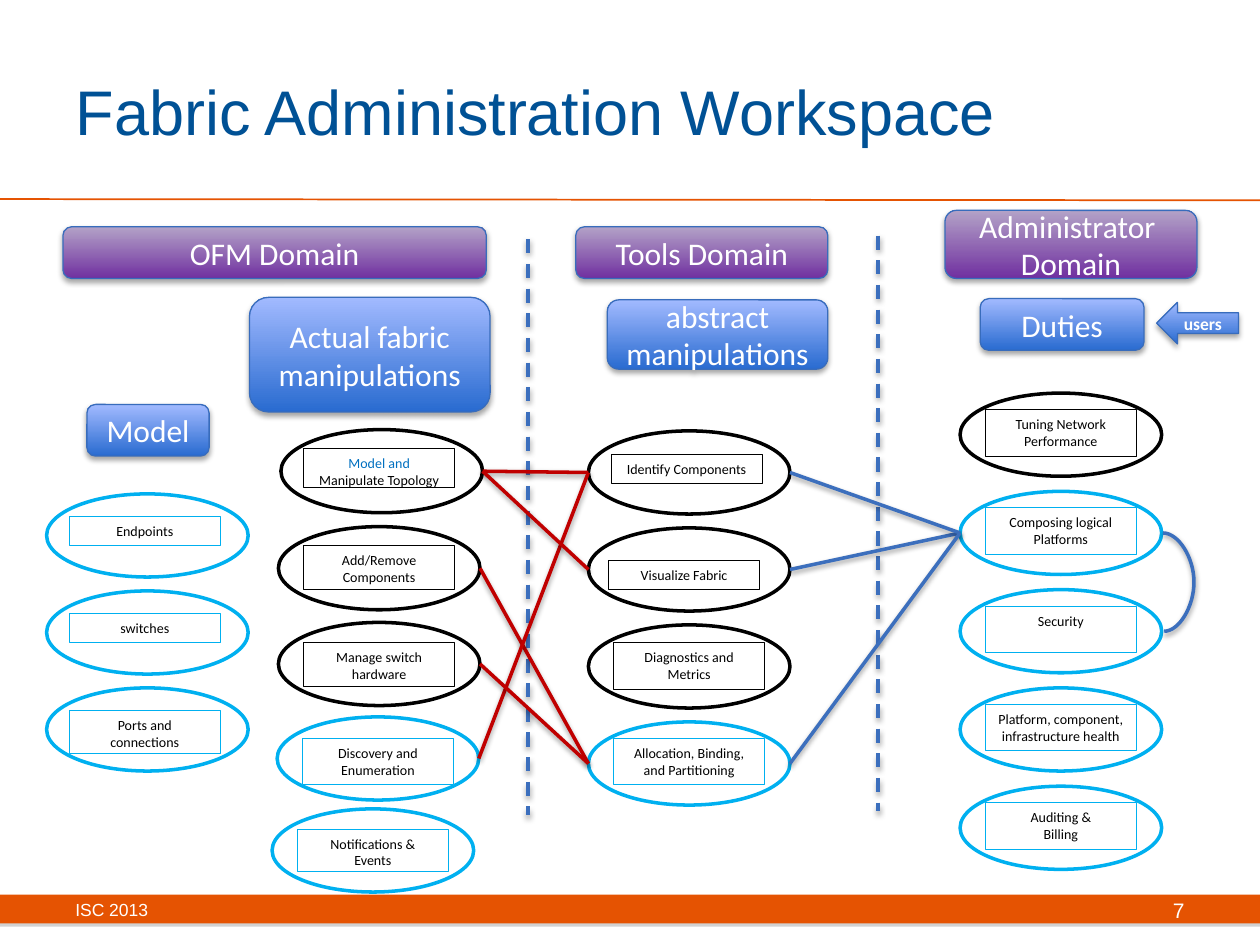
from dataclasses import dataclass

from lxml import etree
from pptx import Presentation
from pptx.dml.color import RGBColor
from pptx.enum.dml import MSO_LINE
from pptx.enum.shapes import MSO_CONNECTOR, MSO_SHAPE
from pptx.enum.text import MSO_ANCHOR, PP_ALIGN
from pptx.oxml.ns import qn
from pptx.util import Pt

OVAL, RECT, ROUND = MSO_SHAPE.OVAL, MSO_SHAPE.RECTANGLE, MSO_SHAPE.ROUNDED_RECTANGLE
ARROW = MSO_SHAPE.RIGHT_ARROW
LINE, CURVE = MSO_CONNECTOR.STRAIGHT, MSO_CONNECTOR.CURVE
DASH = MSO_LINE.DASH
TOP, MIDDLE = MSO_ANCHOR.TOP, MSO_ANCHOR.MIDDLE
LEFT, CENTER, RIGHT = PP_ALIGN.LEFT, PP_ALIGN.CENTER, PP_ALIGN.RIGHT
SCALE = 9144
OVAL_W, OVAL_H, LABEL_W = 160, 66, 120


@dataclass(frozen=True)
class Theme:
    """Hold the colours, type formats and shadows of the slide."""
    white: str = "FFFFFF"
    ink: str = "000000"
    cyan: str = "00B0F0"
    lead: str = "0070C0"
    orange: str = "E55302"
    edge: str = "386CBC"
    blue: str = "3C6FBD"
    red: str = "C00000"
    azure: tuple = ("296BD0", "A2BAFF")
    purple: tuple = ("7030A0", "B3A2C7")
    title: tuple = ("Arial", 36, False, "005195")
    foot: tuple = ("Arial", 10, False, "FFFFFF")
    page: tuple = ("Arial", 12, False, "FFFFFF")
    head: tuple = ("Calibri", 18, False, "FFFFFF")
    user: tuple = ("Calibri", 10, True, "FFFFFF")
    label: tuple = ("Calibri", 8, False, "000000")
    soft: tuple = ("000000", 35, 3.1, 1.8)
    cast: tuple = ("000000", 38, 3.1, 1.6)
    flat: tuple = ("808080", 35, 0, 1.8)


THEME = Theme()


def px(*sizes):
    """Turn px lengths into EMU."""
    return [size * SCALE for size in sizes]


def rgb(tone):
    """Make a colour from its hex code."""
    return RGBColor.from_string(tone)


def shade(item, form):
    """Give a shape or connector an outer shadow, or none."""
    props = item._element.spPr
    for old in props.findall(qn("a:effectLst")):
        props.remove(old)
    list_ = etree.SubElement(props, qn("a:effectLst"))
    if form:
        tone, alpha, blur, gap = form
        drop = etree.SubElement(list_, qn("a:outerShdw"), blurRad=str(Pt(blur)),
                                dist=str(Pt(gap)), dir="5400000", rotWithShape="0")
        tint = etree.SubElement(drop, qn("a:srgbClr"), val=tone)
        etree.SubElement(tint, qn("a:alpha"), val=str(alpha * 1000))


def write(shape, text, form, align=CENTER, anchor=MIDDLE):
    """Write paragraphs split at line ends, with lead runs before a bar."""
    face, size, bold, tone = form
    frame = shape.text_frame
    for name, value in {"word_wrap": True, "vertical_anchor": anchor}.items():
        setattr(frame, name, value)
    for i, line in enumerate(text.split("\n")):
        para = frame.add_paragraph() if i else frame.paragraphs[0]
        para.alignment = align
        parts = line.split("|")
        for j, part in enumerate(parts):
            run = para.add_run()
            run.text = part
            font = {"name": face, "size": Pt(size), "bold": bold}
            for name, value in font.items():
                setattr(run.font, name, value)
            run.font.color.rgb = rgb(tone if j == len(parts) - 1 else THEME.lead)


def draw(slide, kind, box, fill=None, line=None, width=1, shadow=None):
    """Draw a preset shape with a plain, gradient or empty fill."""
    shape = slide.shapes.add_shape(kind, *px(*box))
    if isinstance(fill, tuple):
        shape.fill.gradient()
        shape.fill.gradient_angle = 90
        for stop, tone in zip(shape.fill.gradient_stops, fill):
            stop.color.rgb = rgb(tone)
    elif fill:
        shape.fill.solid()
        shape.fill.fore_color.rgb = rgb(fill)
    else:
        shape.fill.background()
    if line:
        shape.line.color.rgb = rgb(line)
        shape.line.width = Pt(width)
    else:
        shape.line.fill.background()
    shade(shape, shadow)
    return shape


def join(slide, start, end, tone, width=2, kind=LINE, shadow=THEME.cast):
    """Draw a connector between two points."""
    link = slide.shapes.add_connector(kind, *px(*start, *end))
    link.line.color.rgb = rgb(tone)
    link.line.width = Pt(width)
    shade(link, shadow)
    return link


def frame(slide, box):
    """Place the title, the rule and the footer band."""
    left, top, wide, high = box
    title = slide.shapes.title
    spot = px(left + 50, top + 25, 817, 125)
    for name, value in zip(("left", "top", "width", "height"), spot):
        setattr(title, name, value)
    write(title, "Fabric Administration Workspace", THEME.title, LEFT)
    draw(slide, RECT, (left, top + high - 40, wide, 23), THEME.orange,
         shadow=THEME.flat)
    join(slide, (left, top + 158), (left + wide, top + 159), THEME.orange, 1,
         shadow=None)
    notes = (("ISC 2013", 50, 317, THEME.foot, LEFT),
             ("7", 717, 233, THEME.page, RIGHT))
    for text, x, span, form, align in notes:
        area = slide.shapes.add_textbox(*px(left + x, top + high - 48, span, 40))
        write(area, text, form, align)


def head(slide, box, text, fill=THEME.azure):
    """Place a rounded heading."""
    shape = draw(slide, ROUND, box, fill, THEME.edge, 0.75, THEME.soft)
    write(shape, text, THEME.head)


def node(slide, spot, text, tone, label):
    """Place an oval with its boxed label."""
    x, y = spot
    left, top, high = label
    draw(slide, OVAL, (x, y, OVAL_W, OVAL_H), None, tone, 2)
    box = (x + left, y + top, LABEL_W, high)
    shape = draw(slide, RECT, box, THEME.white, tone, 0.5)
    write(shape, text, THEME.label, anchor=TOP)


def column(slide, spots, rows):
    """Place one node at each spot."""
    for spot, row in zip(spots, rows):
        node(slide, spot, *row)


def stack(x, y, step, count):
    """List evenly spaced spots down a column."""
    return [(x, y + step * i) for i in range(count)]


def links(slide, froms, tos, pairs, tone):
    """Join right ends of one column to left ends of the next."""
    for i, j in pairs:
        (ax, ay), (bx, by) = froms[i], tos[j]
        mid = OVAL_H // 2
        join(slide, (ax + OVAL_W, ay + mid), (bx, by + mid), tone)


def bow(slide, x, y, high, reach):
    """Draw a curve that bulges to the right."""
    link = join(slide, (x, y), (x + 1, y + high), THEME.blue, kind=CURVE)
    guides = link._element.spPr.find(qn("a:prstGeom")).find(qn("a:avLst"))
    etree.SubElement(guides, qn("a:gd"), name="adj1", fmla=f"val {reach * 100000}")


def main():
    """Build and save the slide."""
    deck = Presentation()
    deck.slide_width, deck.slide_height = px(1000, 750)
    slide = deck.slides.add_slide(deck.slide_layouts[5])
    frame(slide, (0, 0, 1000, 750))
    ink, cyan = THEME.ink, THEME.cyan

    model = stack(37, 392, 77, 3)
    fabric = [(223, 341), (221, 418), (221, 494), (220, 569), (216, 642)]
    tools = stack(467, 342, 77, 4)
    duties = stack(762, 312, 78, 5)
    column(slide, model, [("Endpoints", cyan, (18, 18, 23)),
                          ("switches", cyan, (18, 18, 23)),
                          ("Ports and connections", cyan, (18, 18, 34))])
    column(slide, fabric, [("Model and |Manipulate Topology", ink, (18, 15, 31)),
                           ("Add/Remove Components", ink, (20, 15, 35)),
                           ("Manage switch hardware", ink, (20, 16, 35)),
                           ("Discovery and Enumeration", cyan, (20, 17, 37)),
                           ("Notifications &\nEvents", cyan, (20, 16, 34))])
    column(slide, tools, [("Identify Components", ink, (18, 19, 23)),
                          ("Visualize Fabric", ink, (16, 26, 23)),
                          ("Diagnostics and Metrics", ink, (20, 14, 37)),
                          ("Allocation, Binding, and Partitioning", cyan, (20, 13, 37))])
    names = ("Tuning Network Performance", "Composing logical Platforms", "Security",
             "Platform, component, infrastructure health", "Auditing &\nBilling")
    column(slide, duties, [(name, cyan if i else ink, (20, 13, 37))
                           for i, name in enumerate(names)])

    for x, y in ((697, 187), (419, 190)):
        join(slide, (x, y), (x, y + 457), THEME.blue).line.dash_style = DASH
    head(slide, (50, 180, 336, 41), "OFM Domain", THEME.purple)
    head(slide, (457, 180, 200, 41), "Tools Domain", THEME.purple)
    head(slide, (750, 167, 200, 54), "Administrator \nDomain", THEME.purple)
    head(slide, (69, 321, 97, 41), "Model")
    head(slide, (198, 236, 191, 91), "Actual fabric\nmanipulations")
    head(slide, (482, 238, 175, 55), "abstract\nmanipulations")
    head(slide, (778, 237, 130, 41), "Duties")
    links(slide, tools, duties, ((1, 1), (0, 1), (3, 1)), THEME.blue)
    links(slide, fabric, tools, ((0, 0), (1, 3), (3, 0), (0, 1), (2, 3)), THEME.red)
    bow(slide, 923, 423, 78, 25)
    users = draw(slide, ARROW, (918, 240, 65, 33), THEME.azure, THEME.edge, 0.75,
                 THEME.soft)
    users._element.spPr.find(qn("a:xfrm")).set("flipH", "1")
    write(users, "users", THEME.user)
    deck.save("out.pptx")


if __name__ == "__main__":
    main()
